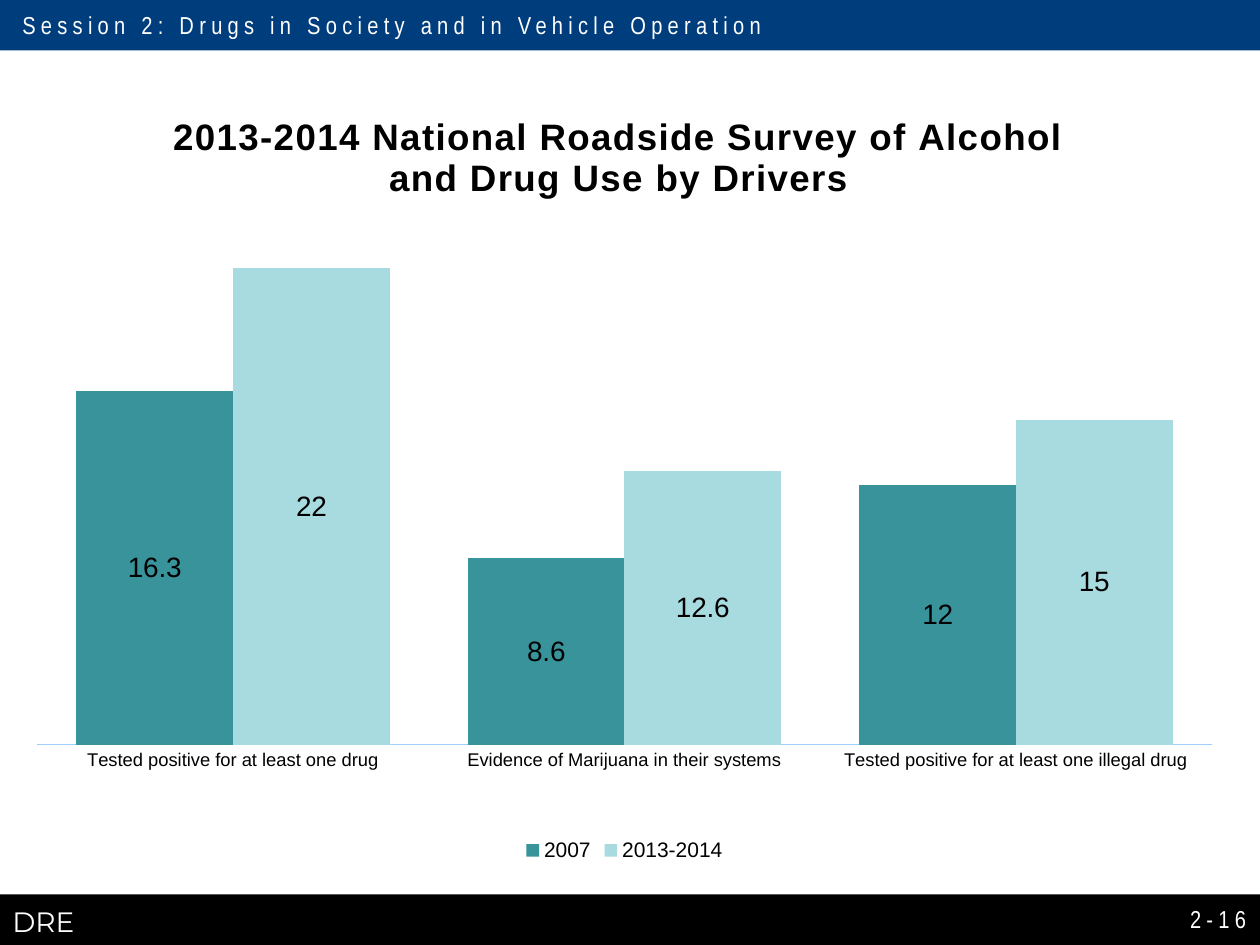
from lxml.etree import SubElement
from pptx import Presentation
from pptx.chart.data import CategoryChartData
from pptx.dml.color import RGBColor
from pptx.enum.chart import (XL_CHART_TYPE, XL_LABEL_POSITION,
                             XL_LEGEND_POSITION, XL_TICK_MARK)
from pptx.enum.shapes import MSO_SHAPE
from pptx.enum.text import MSO_ANCHOR, PP_ALIGN
from pptx.oxml.ns import qn
from pptx.util import Cm, Pt

NAVY = RGBColor(0x00, 0x3D, 0x7D)
BLACK = RGBColor(0x00, 0x00, 0x00)
WHITE = RGBColor(0xFF, 0xFF, 0xFF)
TEAL = RGBColor(0x38, 0x93, 0x9B)
AQUA = RGBColor(0xA7, 0xDB, 0xDF)
SKY = RGBColor(0x9F, 0xCE, 0xFF)

WIDE, HIGH, BAND = 25.4, 19.05, 1.02

CATS = ["Tested positive for at least one drug",
        "Evidence of Marijuana in their systems",
        "Tested positive for at least one illegal drug"]
ROWS = [("2007", [16.3, 8.6, 12], TEAL),
        ("2013-2014", [22, 12.6, 15], AQUA)]


def style(font, size, color=BLACK, name="Arial", bold=False):
    font.size, font.name, font.bold = Pt(size), name, bold
    font.color.rgb = color


def track(run, points):
    """Set the letter spacing of a run."""
    run.font._element.set("spc", str(int(points * 100)))


def place(node, index, **spots):
    """Give a chart part a manual layout, in fractions of the chart."""
    for old in node.findall(qn("c:layout")):
        node.remove(old)
    frame = SubElement(node, qn("c:layout"))
    node.insert(index, frame)
    manual = SubElement(frame, qn("c:manualLayout"))
    if "w" in spots:
        SubElement(manual, qn("c:layoutTarget")).set("val", "inner")
    for key in ("x", "y"):
        SubElement(manual, qn(f"c:{key}Mode")).set("val", "edge")
    for key, value in spots.items():
        SubElement(manual, qn(f"c:{key}")).set("val", str(value))


class Deck:
    def __init__(self):
        self.prs = Presentation()
        self.prs.slide_width, self.prs.slide_height = Cm(WIDE), Cm(HIGH)
        self.slide = self.prs.slides.add_slide(self.prs.slide_layouts[6])

    def band(self, top, color):
        bar = self.slide.shapes.add_shape(
            MSO_SHAPE.RECTANGLE, 0, Cm(top), Cm(WIDE), Cm(BAND))
        bar.shadow.inherit = False
        bar.fill.solid()
        bar.fill.fore_color.rgb = color
        bar.line.fill.background()

    def text(self, words, left, top, width, height, size=14,
             name="Arial Narrow", gap=3, align=PP_ALIGN.LEFT,
             anchor=MSO_ANCHOR.TOP, wrap=True):
        box = self.slide.shapes.add_textbox(
            Cm(left), Cm(top), Cm(width), Cm(height))
        frame = box.text_frame
        frame.text = words
        frame.word_wrap, frame.vertical_anchor = wrap, anchor
        para = frame.paragraphs[0]
        para.alignment = align
        style(para.runs[0].font, size, WHITE, name)
        if gap:
            track(para.runs[0], gap)

    def chart(self, title, left, top, width, height):
        data = CategoryChartData()
        data.categories = CATS
        for name, vals, _ in ROWS:
            data.add_series(name, vals)
        chart = self.slide.shapes.add_chart(
            XL_CHART_TYPE.COLUMN_CLUSTERED, Cm(left), Cm(top),
            Cm(width), Cm(height), data).chart
        style(chart.font, 10, NAVY)

        chart.has_title = True
        head = chart.chart_title
        head.include_in_layout = False
        head.text_frame.text = title
        run = head.text_frame.paragraphs[0].runs[0]
        style(run.font, 21, bold=True)
        track(run, 0.8)
        place(head._element, 1, x=0.11, y=0.04)

        chart.has_legend = True
        chart.legend.position = XL_LEGEND_POSITION.BOTTOM
        chart.legend.include_in_layout = False
        style(chart.legend.font, 12)

        axis = chart.category_axis
        axis.major_tick_mark = XL_TICK_MARK.NONE
        style(axis.tick_labels.font, 10.5)
        axis.format.line.color.rgb = SKY
        axis.format.line.width = Pt(0.75)
        scale = chart.value_axis
        scale.minimum_scale, scale.maximum_scale = 0, 25
        scale.has_major_gridlines = False
        scale.visible = False

        plot = chart.plots[0]
        plot.gap_width, plot.overlap = 50, 0
        plot.vary_by_categories = False
        for series, (_, _, color) in zip(plot.series, ROWS):
            series.format.fill.solid()
            series.format.fill.fore_color.rgb = color
            labels = series.data_labels
            labels.show_value = True
            labels.position = XL_LABEL_POSITION.CENTER
            style(labels.font, 16)
        area = chart._chartSpace.find(".//" + qn("c:plotArea"))
        place(area, 0, x=0, y=0.161, w=1, h=0.685)


def main():
    deck = Deck()
    deck.band(HIGH - BAND, BLACK)
    deck.band(0, NAVY)
    deck.text("Session 2: Drugs in Society and in Vehicle Operation",
              0.2, 0.08, 15.65, 0.86, wrap=False)
    deck.text("DRE", 0, 18.11, 4.75, 0.94, 16, "Montserrat", gap=0)
    deck.chart("2013-2014 National Roadside Survey of Alcohol "
               "and Drug Use by Drivers", 0.74, 1.52, 23.7, 15.95)
    deck.text("2-16", 20.62, 18.01, 4.75, BAND,
              align=PP_ALIGN.RIGHT, anchor=MSO_ANCHOR.MIDDLE)
    deck.prs.save("out.pptx")


if __name__ == "__main__":
    main()
